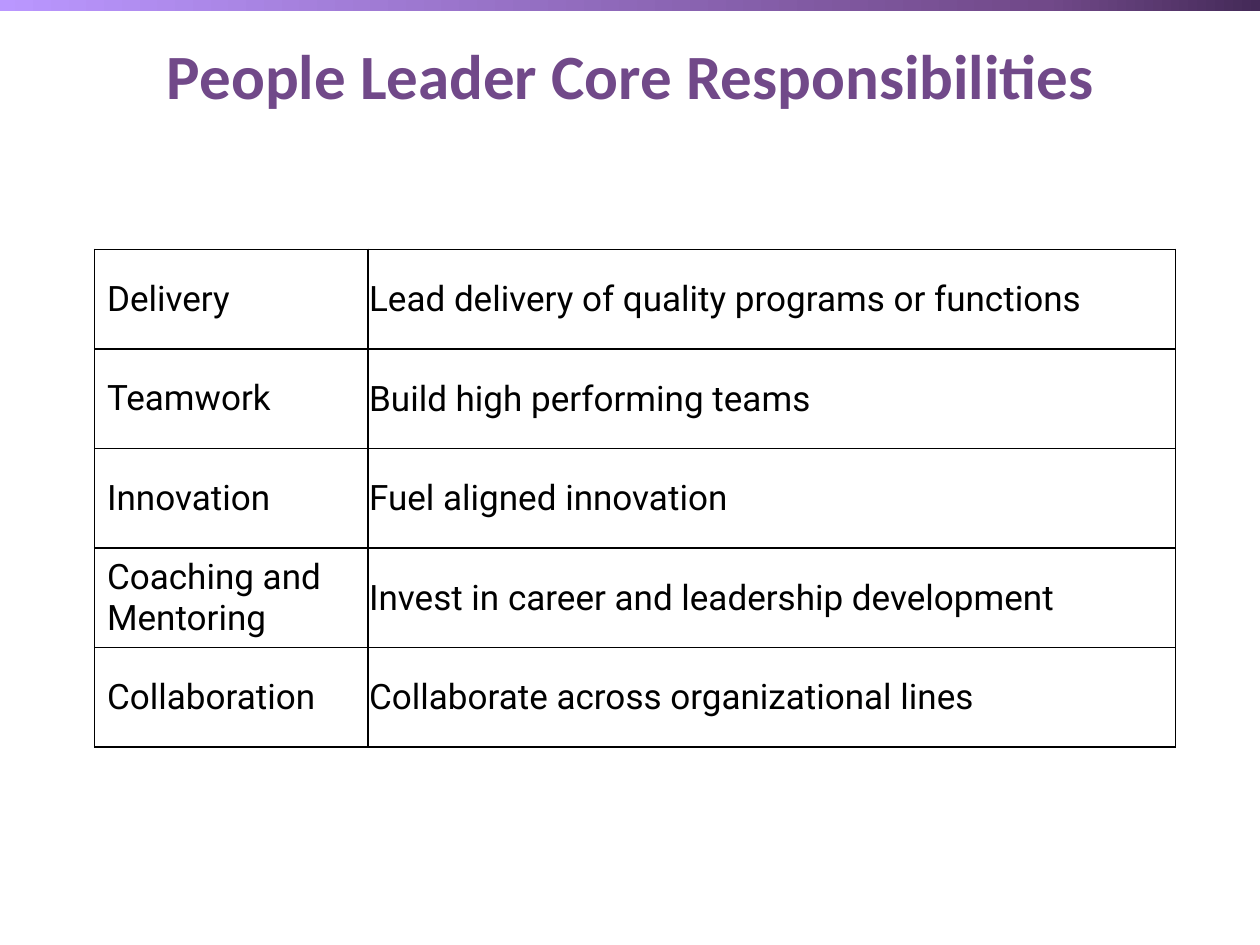
from copy import deepcopy
from dataclasses import dataclass

from lxml.etree import SubElement
from pptx import Presentation
from pptx.dml.color import RGBColor
from pptx.enum.shapes import MSO_SHAPE
from pptx.enum.text import MSO_ANCHOR, PP_ALIGN
from pptx.oxml.ns import qn
from pptx.util import Inches, Pt

COLORS = {
    "dark": "442A58",
    "purple": "714989",
    "lilac": "BA97FF",
    "black": "000000",
}
WIDTH, HEIGHT = Inches(10), Inches(7.5)
ROW_HEIGHT = Inches(0.79)
COLUMN_WIDTHS = (Inches(2.17), Inches(6.41))
BORDER_WIDTH = Pt(1)


@dataclass
class Responsibility:
    area: str
    duty: str


RESPONSIBILITIES = [
    Responsibility("Delivery", "Lead delivery of quality programs or functions"),
    Responsibility("Teamwork", "Build high performing teams"),
    Responsibility("Innovation", "Fuel aligned innovation"),
    Responsibility("Coaching and Mentoring", "Invest in career and leadership development"),
    Responsibility("Collaboration", "Collaborate across organizational lines"),
]


def color(name: str) -> RGBColor:
    return RGBColor.from_string(COLORS[name])


def add_text(para, text: str, font: str, size: int, color_name: str, bold: bool = False) -> None:
    span = para.add_run()
    span.text = text
    span.font.name = font
    span.font.size = Pt(size)
    span.font.bold = bold
    span.font.color.rgb = color(color_name)


def add_top_bar(page) -> None:
    bar = page.shapes.add_shape(
        MSO_SHAPE.RECTANGLE, Inches(-0.02), Inches(-0.02), Inches(10.02), Inches(0.11)
    )
    bar.shadow.inherit = False
    bar.line.fill.background()
    bar.fill.gradient()
    stop_list = bar.element.spPr.find(".//" + qn("a:gsLst"))
    stop_list.append(deepcopy(stop_list[-1]))
    stops = [("dark", 0), ("purple", 0.17), ("lilac", 1)]
    for stop, (name, position) in zip(bar.fill.gradient_stops, stops):
        stop.color.rgb = color(name)
        stop.position = position
    bar.fill.gradient_angle = 180


def add_title(page, text: str) -> None:
    title = page.shapes.title
    title.left, title.top = Inches(0.28), Inches(0.08)
    title.width, title.height = Inches(9.45), Inches(1.02)
    title.text_frame.vertical_anchor = MSO_ANCHOR.MIDDLE
    para = title.text_frame.paragraphs[0]
    para.alignment = PP_ALIGN.CENTER
    add_text(para, text, "Calibri", 36, "purple", bold=True)


def add_borders(cell) -> None:
    properties = cell._tc.get_or_add_tcPr()
    for position, side in enumerate(("lnL", "lnR", "lnT", "lnB")):
        line = SubElement(properties, qn(f"a:{side}"), w=str(BORDER_WIDTH))
        fill = SubElement(line, qn("a:solidFill"))
        SubElement(fill, qn("a:srgbClr"), val=COLORS["black"])
        properties.insert(position, line)


def fill_cell(cell, text: str) -> None:
    cell.fill.background()
    cell.vertical_anchor = MSO_ANCHOR.MIDDLE
    add_borders(cell)
    add_text(cell.text_frame.paragraphs[0], text, "Roboto", 20, "black")


def add_responsibilities(page, items: list[Responsibility]) -> None:
    frame = page.shapes.add_table(
        len(items), len(COLUMN_WIDTHS), Inches(0.75), Inches(1.98),
        sum(COLUMN_WIDTHS), ROW_HEIGHT * len(items),
    )
    table = frame.table
    table.first_row = table.horz_banding = False
    for column, width in zip(table.columns, COLUMN_WIDTHS):
        column.width = width
    for row, item in zip(table.rows, items):
        row.height = ROW_HEIGHT
        area_cell, duty_cell = row.cells
        fill_cell(area_cell, item.area)
        fill_cell(duty_cell, item.duty)
        duty_cell.margin_left = duty_cell.margin_top = duty_cell.margin_right = Inches(0.01)
        duty_cell.margin_bottom = 0


def main() -> None:
    deck = Presentation()
    deck.slide_width, deck.slide_height = WIDTH, HEIGHT
    page = deck.slides.add_slide(deck.slide_layouts[5])
    add_top_bar(page)
    add_title(page, "People Leader Core Responsibilities")
    add_responsibilities(page, RESPONSIBILITIES)
    deck.save("out.pptx")


if __name__ == "__main__":
    main()
